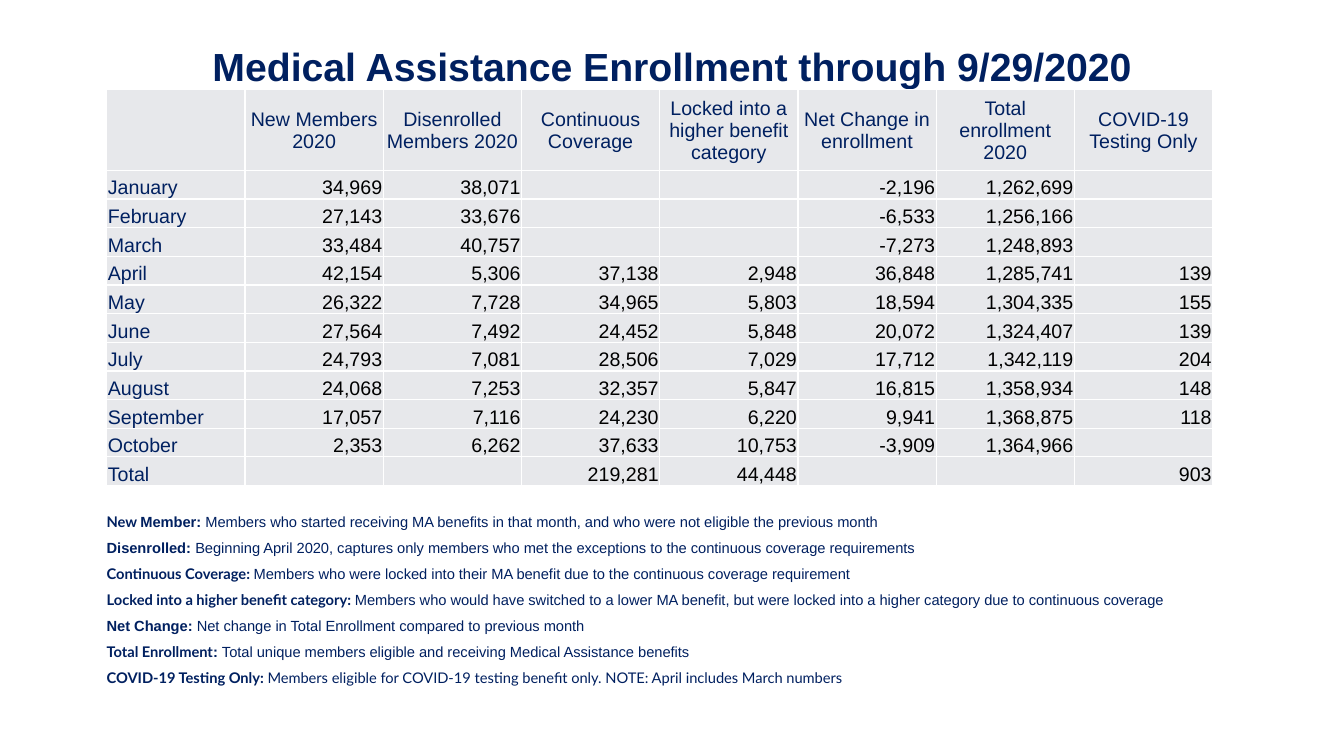
"""Build the Medical Assistance enrollment slide."""
from dataclasses import dataclass

import lxml.etree
import pptx
import pptx.dml.color
import pptx.enum.text
import pptx.oxml.ns
import pptx.util

EMU_PER_PX = 9144
NAVY, BLACK, WHITE, GREY = "002060", "000000", "FFFFFF", "E7E8EB"
ALIGN = pptx.enum.text.PP_ALIGN
ANCHOR = pptx.enum.text.MSO_ANCHOR

ENROLLMENT = [
    ["", "New Members 2020", "Disenrolled Members 2020", "Continuous Coverage",
     "Locked into a higher benefit category", "Net Change in enrollment",
     "Total enrollment 2020", "COVID-19 Testing Only"],
    ["January", "34,969", "38,071", "", "", "-2,196", "1,262,699", ""],
    ["February", "27,143", "33,676", "", "", "-6,533", "1,256,166", ""],
    ["March", "33,484", "40,757", "", "", "-7,273", "1,248,893", ""],
    ["April", "42,154", "5,306", "37,138", "2,948", "36,848", "1,285,741", "139"],
    ["May", "26,322", "7,728", "34,965", "5,803", "18,594", "1,304,335", "155"],
    ["June", "27,564", "7,492", "24,452", "5,848", "20,072", "1,324,407", "139"],
    ["July", "24,793", "7,081", "28,506", "7,029", "17,712", "1,342,119", "204"],
    ["August", "24,068", "7,253", "32,357", "5,847", "16,815", "1,358,934", "148"],
    ["September", "17,057", "7,116", "24,230", "6,220", "9,941", "1,368,875", "118"],
    ["October", "2,353", "6,262", "37,633", "10,753", "-3,909", "1,364,966", ""],
    ["Total", "", "", "219,281", "44,448", "", "", "903"],
]


@dataclass(frozen=True)
class Run:
    text: str
    size: float
    font: str = "Arial"
    color: str = NAVY
    bold: bool = False


@dataclass(frozen=True)
class Box:
    left: int
    top: int
    width: int
    height: int


def term(text: str, font: str = "Lato") -> Run:
    return Run(text, 10.5, font, bold=True)


def meaning(text: str, font: str = "Arial") -> Run:
    return Run(text, 10.5, font)


DEFINITIONS = [
    [term("New "), term("Member: ", "Arial"),
     meaning("Members who started receiving MA benefits in that month, "
             "and who were not eligible the previous month")],
    [term("Disenrolled: ", "Arial"),
     meaning("Beginning April 2020, captures only members who met the "
             "exceptions to the continuous coverage requirements")],
    [term("Continuous Coverage: "),
     meaning("Members who were locked into their MA benefit due to the "
             "continuous coverage requirement")],
    [term("Locked into a higher benefit category: "),
     meaning("Members who would have switched to a lower MA benefit, but were "
             "locked into a higher category due to continuous coverage")],
    [term("Net Change: ", "Arial"),
     meaning("Net change in Total Enrollment compared to previous month")],
    [term("Total Enrollment"), term(": ", "Arial"),
     meaning("Total unique members eligible and receiving Medical Assistance benefits")],
    [term("COVID-19 Testing Only: "),
     meaning("Members eligible for COVID-19 testing benefit only. "
             "NOTE: April includes March numbers", "Lato")],
]


def px(n: int) -> int:
    return pptx.util.Emu(n * EMU_PER_PX)


def rgb(color: str) -> pptx.dml.color.RGBColor:
    return pptx.dml.color.RGBColor.from_string(color)


def add_run(p, run: Run) -> None:
    r = p.add_run()
    r.text = run.text
    r.font.size = pptx.util.Pt(run.size)
    r.font.name = run.font
    r.font.bold = run.bold
    r.font.color.rgb = rgb(run.color)


def add_text(s, box: Box, paragraphs: list[list[Run]], align, anchor,
             space_after: int = 0):
    sp = s.shapes.add_textbox(px(box.left), px(box.top), px(box.width), px(box.height))
    tf = sp.text_frame
    tf.word_wrap = True
    tf.vertical_anchor = anchor
    for i, runs in enumerate(paragraphs):
        p = tf.paragraphs[0] if i == 0 else tf.add_paragraph()
        p.alignment = align
        p.space_after = pptx.util.Pt(space_after)
        for run in runs:
            add_run(p, run)
    return tf


def add_borders(cell) -> None:
    qn = pptx.oxml.ns.qn
    props = cell._tc.get_or_add_tcPr()
    for side in ("lnL", "lnR", "lnT", "lnB"):
        line = lxml.etree.SubElement(props, qn(f"a:{side}"), w=str(pptx.util.Pt(1)))
        fill = lxml.etree.SubElement(line, qn("a:solidFill"))
        lxml.etree.SubElement(fill, qn("a:srgbClr"), val=WHITE)


def fill_cell(cell, text: str, row: int, col: int) -> None:
    add_borders(cell)
    cell.fill.solid()
    cell.fill.fore_color.rgb = rgb(GREY)
    cell.margin_left = cell.margin_right = cell.margin_top = px(1)
    cell.margin_bottom = 0
    cell.vertical_anchor = ANCHOR.BOTTOM if row else ANCHOR.MIDDLE
    p = cell.text_frame.paragraphs[0]
    if not text:
        lxml.etree.SubElement(p._p, pptx.oxml.ns.qn("a:endParaRPr"), sz="1400")
        return
    p.alignment = ALIGN.CENTER if row == 0 else ALIGN.RIGHT if col else ALIGN.LEFT
    add_run(p, Run(text, 14, color=BLACK if row and col else NAVY))


def add_enrollment_table(s, box: Box, header_height: int) -> None:
    n_rows, n_cols = len(ENROLLMENT), len(ENROLLMENT[0])
    table = s.shapes.add_table(n_rows, n_cols, px(box.left), px(box.top),
                               px(box.width), px(box.height)).table
    table.first_row = table.horz_banding = False
    for column in table.columns:
        column.width = px(box.width) // n_cols
    for row in table.rows:
        row.height = px(box.height - header_height) // (n_rows - 1)
    table.rows[0].height = px(header_height)
    for i, values in enumerate(ENROLLMENT):
        for j, text in enumerate(values):
            fill_cell(table.cell(i, j), text, i, j)


def main() -> None:
    prs = pptx.Presentation()
    prs.slide_width, prs.slide_height = px(1333), px(750)
    s = prs.slides.add_slide(prs.slide_layouts[6])
    title = Run("Medical Assistance Enrollment through 9/29/2020", 28, bold=True)
    tf = add_text(s, Box(53, 28, 1227, 87), [[title]], ALIGN.CENTER, ANCHOR.TOP)
    tf.margin_top = px(14)
    add_text(s, Box(96, 500, 1229, 190), DEFINITIONS, ALIGN.LEFT, ANCHOR.MIDDLE, 6)
    add_enrollment_table(s, Box(106, 89, 1097, 393), 80)
    prs.save("out.pptx")


if __name__ == "__main__":
    main()
